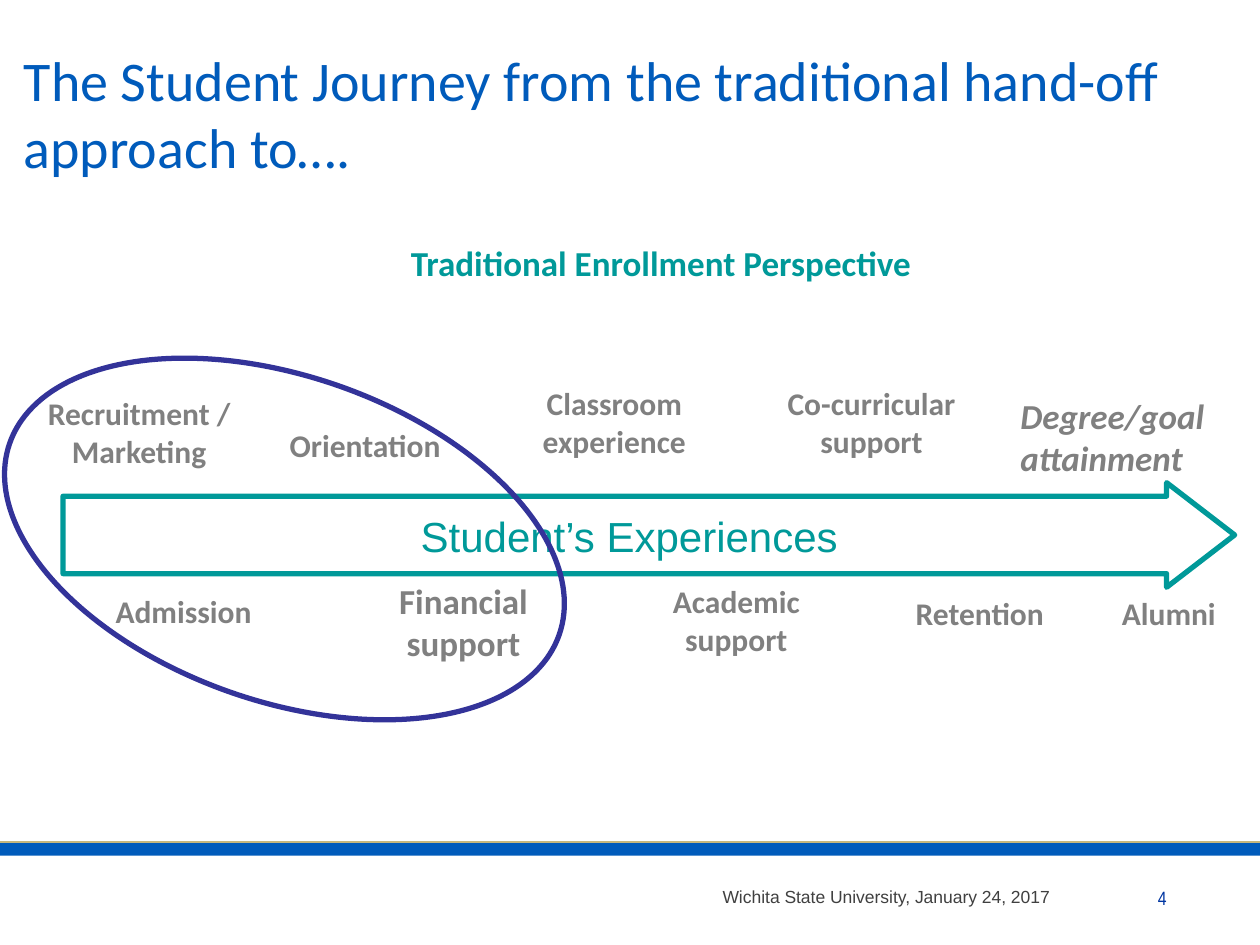
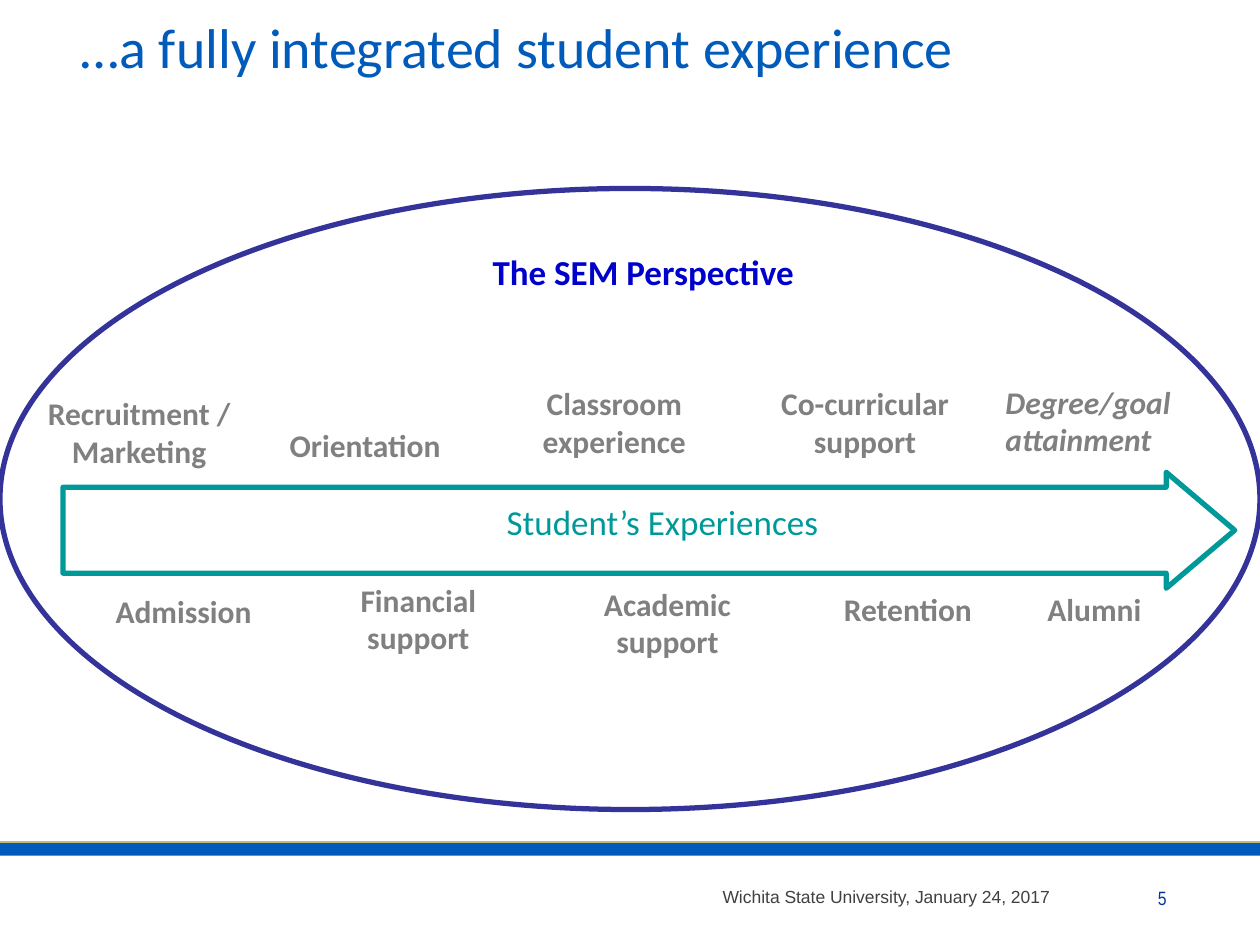
from dataclasses import dataclass

from lxml import etree
from pptx import Presentation
from pptx.dml.color import RGBColor
from pptx.enum.shapes import MSO_CONNECTOR as Connector, MSO_SHAPE as Preset
from pptx.enum.text import MSO_ANCHOR as Anchor, PP_ALIGN as Align
from pptx.oxml.ns import qn
from pptx.util import Cm, Pt

BLUE, GOLD, TEAL, INDIGO = "005BBB", "C6B77D", "009999", "333399"
GREY, DARK_GREY, PAGE_BLUE, HEADING_BLUE = "808080", "404040", "0036A2", "0000CC"

TITLE = dict(name="Calibri", size=32, color=BLUE)
LABEL = dict(name="Calibri", size=18, color=GREY, bold=True)
LARGE_LABEL = LABEL | dict(size=20)
FOOTER = dict(name="Arial", size=10, color=DARK_GREY)
PAGE_NUMBER = dict(name="Arial Narrow", size=11, color=PAGE_BLUE)


@dataclass
class Box:
    """A rectangle in centimetres."""
    left: float
    top: float
    width: float
    height: float

    def inner(self, left, top, width, height):
        """Return a box whose position is given relative to this one."""
        return Box(self.left + left, self.top + top, width, height)

    def lengths(self):
        return [Cm(n) for n in (self.left, self.top, self.width, self.height)]


PAGE = Box(0, 0, 25.4, 19.05)
FOOTER_AREA = PAGE.inner(0, 16.97, 25.4, 2.08)
JOURNEY_AREA = PAGE.inner(0, 3.8, 25.4, 12.52)
ONE_LINE, TWO_LINES = 1.02, 1.78

# Label: text, left, top, width, height, alignment, style
SHARED_LABELS = [
    ("Recruitment / Marketing", 0.48, 4.02, 4.65, TWO_LINES, Align.CENTER, LABEL),
    ("Admission", 2.08, 8.01, 4.01, ONE_LINE, Align.LEFT, LABEL),
    ("Orientation", 5.59, 4.66, 4.06, ONE_LINE, Align.LEFT, LABEL),
    ("Classroom experience", 10.39, 3.82, 3.99, TWO_LINES, Align.CENTER, LABEL),
]
TRADITIONAL_LABELS = [
    ("Co-curricular support", 14.61, 3.82, 5.92, TWO_LINES, Align.CENTER, LABEL),
    ("Degree/goal attainment", 20.32, 4.02, 5.08, 1.96, Align.LEFT,
     LARGE_LABEL | dict(italic=True)),
    ("Academic support", 12.85, 7.81, 3.99, TWO_LINES, Align.CENTER, LABEL),
    ("Retention", 18.21, 8.06, 4.01, ONE_LINE, Align.LEFT, LABEL),
    ("Financial support", 7.39, 7.76, 3.91, 1.96, Align.CENTER, LARGE_LABEL),
    ("Alumni", 20.75, 8.06, 4.01, ONE_LINE, Align.RIGHT, LABEL),
]
INTEGRATED_LABELS = [
    ("Co-curricular support", 14.61, 3.82, 5.66, TWO_LINES, Align.CENTER, LABEL),
    ("Degree/goal attainment", 20.02, 3.79, 4.9, TWO_LINES, Align.LEFT,
     LABEL | dict(italic=True)),
    ("Academic support", 11.46, 7.86, 3.99, TWO_LINES, Align.CENTER, LABEL),
    ("Retention", 16.76, 7.96, 4.01, ONE_LINE, Align.LEFT, LABEL),
    ("Financial support", 6.48, 7.78, 3.91, TWO_LINES, Align.CENTER, LABEL),
    ("Alumni", 19.25, 7.96, 4.01, ONE_LINE, Align.RIGHT, LABEL),
]

SLIDES = [
    dict(
        number=4,
        title="The Student Journey from the traditional hand-off approach to….",
        title_box=PAGE.inner(0.48, 0.91, 25.48, 1.42),
        labels=TRADITIONAL_LABELS,
        arrow=(1.27, 5.93, 23.62, 2.11),
        head_ratio=0.65,
        caption=("Student’s Experiences", 6.55, 6.36, 12.27, 1.27, Align.CENTER,
                 dict(name="Arial", size=24, color=TEAL)),
        ellipse=(2.46, 1.2, 6.55, 11.73),
        rotation=289.2,
        heading=("Traditional Enrollment Perspective", 5.92, 0.95, 14.81, 1.12,
                 Align.CENTER, LARGE_LABEL | dict(color=TEAL)),
    ),
    dict(
        number=5,
        title="…a fully integrated student experience",
        title_box=PAGE.inner(1.63, 0.25, 25.96, 1.42),
        labels=INTEGRATED_LABELS,
        arrow=(1.27, 5.72, 23.62, 2.34),
        head_ratio=0.59,
        caption=("Student’s Experiences", 7.54, 6.16, 11.63, 1.12, Align.CENTER,
                 dict(name="Calibri", size=20, color=TEAL)),
        ellipse=(0, 0, 25.4, 12.52),
        rotation=0,
        heading=("The SEM Perspective", 9.68, 1.13, 9.12, 1.12,
                 Align.LEFT, LARGE_LABEL | dict(color=HEADING_BLUE)),
    ),
]


def rgb(color):
    return RGBColor.from_string(color)


def add_text(slide, box, text, style, align=Align.LEFT, anchor=Anchor.TOP, inset=True):
    frame = slide.shapes.add_textbox(*box.lengths()).text_frame
    frame.word_wrap = True
    frame.vertical_anchor = anchor
    if not inset:
        for side in ("left", "top", "right", "bottom"):
            setattr(frame, f"margin_{side}", 0)
    paragraph = frame.paragraphs[0]
    paragraph.alignment = align
    run = paragraph.add_run()
    run.text = text
    for key, value in style.items():
        if key == "color":
            run.font.color.rgb = rgb(value)
        else:
            setattr(run.font, key, Pt(value) if key == "size" else value)


def add_outline(slide, preset, box, color):
    """Add an unfilled shape with a thick line."""
    shape = slide.shapes.add_shape(preset, *box.lengths())
    shape.shadow.inherit = False
    shape.fill.background()
    shape.line.color.rgb = rgb(color)
    shape.line.width = Pt(3)
    return shape


def add_footer(slide, box, number):
    band = slide.shapes.add_shape(
        Preset.RECTANGLE, *box.inner(0, 0, box.width, 0.28).lengths())
    band.shadow.inherit = False
    band.fill.solid()
    band.fill.fore_color.rgb = rgb(BLUE)
    band.line.fill.background()

    add_text(slide, box.inner(9.42, 0.68, 11.74, 0.64),
             "Wichita State University, January 24, 2017", FOOTER,
             Align.RIGHT, Anchor.BOTTOM, inset=False)

    left, top, width, _ = box.lengths()
    rule = slide.shapes.add_connector(Connector.STRAIGHT, left, top, left + width, top)
    rule.line.color.rgb = rgb(GOLD)
    rule.line.width = Pt(1)
    etree.SubElement(rule._element.spPr, qn("a:effectLst"))

    add_text(slide, box.inner(22.91, 0.78, 1.04, 0.74), str(number),
             PAGE_NUMBER, Align.CENTER)


def add_journey(slide, box, content):
    """Draw the arrow, its stage labels and the ellipse around the owned stages."""
    def add_label(text, left, top, width, height, align, style):
        add_text(slide, box.inner(left, top, width, height), text, style, align)

    for label in SHARED_LABELS + content["labels"]:
        add_label(*label)

    arrow = add_outline(slide, Preset.RIGHT_ARROW, box.inner(*content["arrow"]), TEAL)
    arrow.adjustments[0] = 0.74
    arrow.adjustments[1] = content["head_ratio"]
    add_label(*content["caption"])

    ellipse = add_outline(slide, Preset.OVAL, box.inner(*content["ellipse"]), INDIGO)
    ellipse.rotation = content["rotation"]
    add_label(*content["heading"])


def add_journey_slide(presentation, content):
    slide = presentation.slides.add_slide(presentation.slide_layouts[6])
    add_footer(slide, FOOTER_AREA, content["number"])
    add_text(slide, content["title_box"], content["title"], TITLE, inset=False)
    add_journey(slide, JOURNEY_AREA, content)


def main():
    presentation = Presentation()
    presentation.slide_width = Cm(PAGE.width)
    presentation.slide_height = Cm(PAGE.height)
    for content in SLIDES:
        add_journey_slide(presentation, content)
    presentation.save("out.pptx")


if __name__ == "__main__":
    main()
